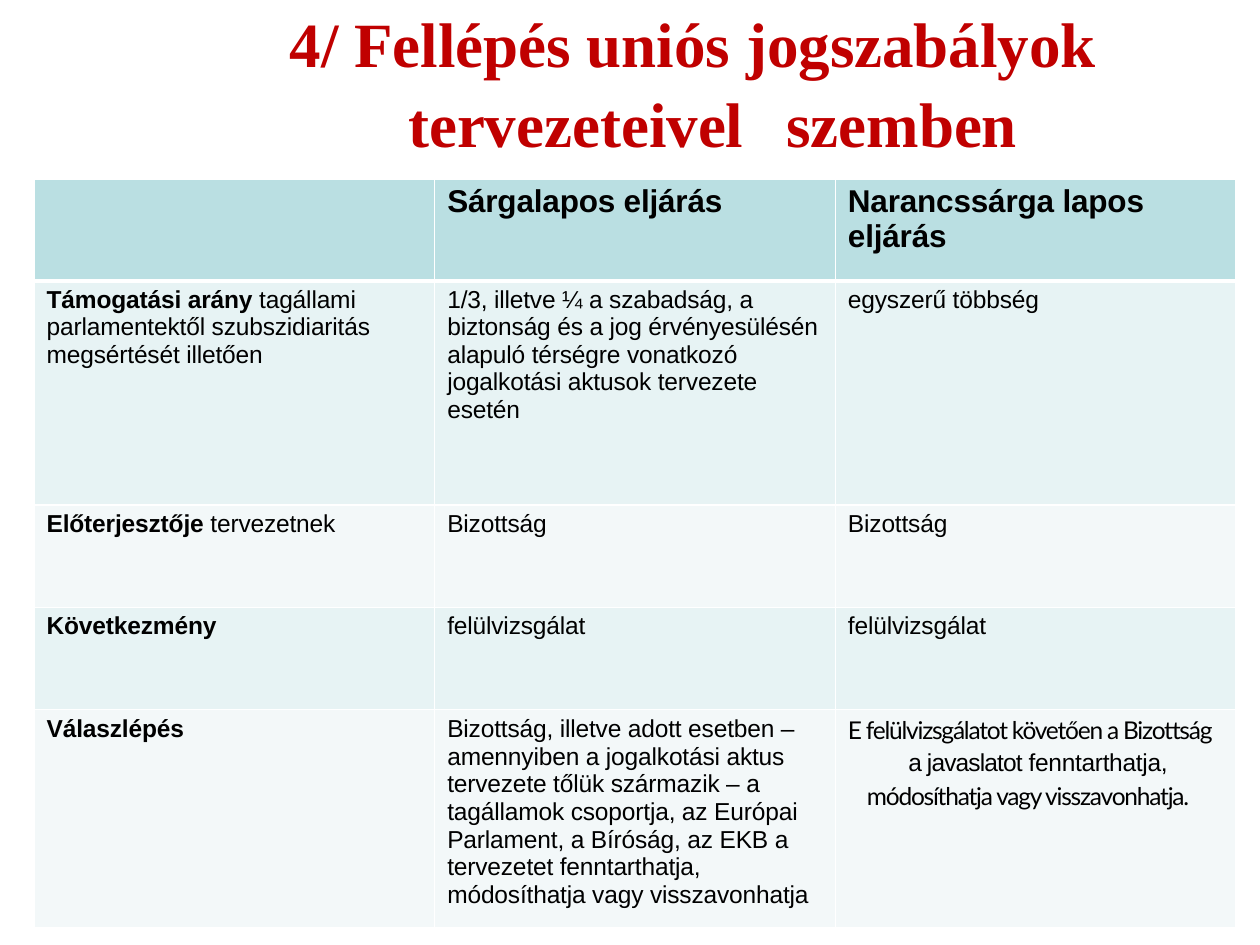
from typing import NamedTuple

from lxml.etree import SubElement
from pptx import Presentation
from pptx.dml.color import RGBColor
from pptx.enum.text import MSO_ANCHOR
from pptx.oxml.ns import qn
from pptx.util import Inches, Pt


class Run(NamedTuple):
    text: str
    bold: bool = False
    font: str = "Arial"
    spacing: float = -0.1


class Para(NamedTuple):
    runs: list[Run]
    left: float = 0.1
    first: float = 0
    before: float = 3.2
    line: float = 1


class Row(NamedTuple):
    height: float
    fill: str
    size: int
    cells: list[list[Para]]
    top_margin: float = 0.04


def rgb(value: str) -> RGBColor:
    return RGBColor.from_string(value)


def add_text(paragraph, text: str, *, size: float, font: str = "Arial", color: str = "000000",
             bold: bool = False, spacing: float = 0) -> None:
    run = paragraph.add_run()
    run.text = text
    run.font.size = Pt(size)
    run.font.name = font
    run.font.bold = bold
    run.font.color.rgb = rgb(color)
    run.font._element.set("spc", str(round(spacing * 100)))


def format_paragraph(paragraph, left: float, first: float, before: float, line: float) -> None:
    """Set indents in inches, space before in points and the line spacing factor."""
    properties = paragraph._p.get_or_add_pPr()
    properties.set("marL", str(Inches(left)))
    properties.set("indent", str(Inches(first)))
    paragraph.space_before = Pt(before)
    paragraph.line_spacing = line


def set_margins(target, top: float) -> None:
    target.margin_left = target.margin_right = target.margin_bottom = 0
    target.margin_top = Inches(top)


def add_border(cell, side: str, width: float) -> None:
    line = SubElement(cell._tc.get_or_add_tcPr(), qn(f"a:{side}"), w=str(Pt(width)))
    fill = SubElement(line, qn("a:solidFill"))
    SubElement(fill, qn("a:srgbClr"), val="FFFFFF")


def fill_cell(cell, row: Row, paras: list[Para], widths: dict[str, float]) -> None:
    set_margins(cell, row.top_margin)
    cell.vertical_anchor = MSO_ANCHOR.TOP
    for side, width in widths.items():
        add_border(cell, side, width)
    cell.fill.solid()
    cell.fill.fore_color.rgb = rgb(row.fill)
    frame = cell.text_frame
    for index, para in enumerate(paras):
        paragraph = frame.add_paragraph() if index else frame.paragraphs[0]
        format_paragraph(paragraph, para.left, para.first, para.before, para.line)
        for run in para.runs:
            add_text(paragraph, run.text, size=row.size, font=run.font,
                     bold=run.bold, spacing=run.spacing)


def plain(text: str) -> list[Para]:
    return [Para([Run(text)])]


def label(bold_part: str, rest: str = "") -> list[Para]:
    runs = [Run(bold_part, bold=True)]
    if rest:
        runs.append(Run(rest))
    return [Para(runs)]


def header(*lines: str) -> list[Para]:
    return [Para([Run(line, bold=True)], before=0.1 if index else 3.1)
            for index, line in enumerate(lines)]


HEADER_FILL, DARK_BAND, LIGHT_BAND = "BADFE2", "E7F3F4", "F3F8F9"
COLUMN_WIDTH = 3.18

orange_card_response = [
    Para([Run("E felülvizsgálatot követően a Bizottság", font="Lato", spacing=-0.7)], before=0.6),
    Para([Run("a ", spacing=-1.1),
          Run("javaslatot ", spacing=-0.5),
          Run("fenntarthatja, ", spacing=-0.2),
          Run("módosíthatja vagy visszavonhatja.", font="Lato", spacing=-0.7)],
         left=0.25, first=0.33, before=0, line=1.15),
]

ROWS = [
    Row(0.81, HEADER_FILL, 18, [
        [], header("Sárgalapos eljárás"), header("Narancssárga lapos", "eljárás")]),
    Row(1.78, DARK_BAND, 14, [
        label("Támogatási arány ",
              "tagállami parlamentektől szubszidiaritás megsértését illetően"),
        plain("1/3, illetve ¼ a szabadság, a biztonság és a jog érvényesülésén alapuló "
              "térségre vonatkozó jogalkotási aktusok tervezete esetén"),
        plain("egyszerű többség")]),
    Row(0.81, LIGHT_BAND, 14, [
        label("Előterjesztője ", "tervezetnek"), plain("Bizottság"), plain("Bizottság")]),
    Row(0.81, DARK_BAND, 14, [
        label("Következmény"), plain("felülvizsgálat"), plain("felülvizsgálat")]),
    Row(1.73, LIGHT_BAND, 14, [
        label("Válaszlépés"),
        plain("Bizottság, illetve adott esetben – amennyiben a jogalkotási aktus tervezete "
              "tőlük származik – a tagállamok csoportja, az Európai Parlament, a Bíróság, "
              "az EKB a tervezetet fenntarthatja, módosíthatja vagy visszavonhatja"),
        orange_card_response], top_margin=0.05),
]


def add_title(slide) -> None:
    title = slide.shapes.add_textbox(Inches(2.29), 0, Inches(6.43), Inches(1.23)).text_frame
    title.word_wrap = True
    set_margins(title, 0.01)
    paragraph = title.paragraphs[0]
    format_paragraph(paragraph, left=0.95, first=-0.94, before=1, line=1.05)
    tabs = SubElement(paragraph._p.get_or_add_pPr(), qn("a:tabLst"))
    SubElement(tabs, qn("a:tab"), pos=str(Inches(3.82)), algn="l")
    add_text(paragraph, "4/ Fellépés uniós jogszabályok tervezeteivel\tszemben",
             size=36, font="Times New Roman", color="C00000", bold=True)


def add_comparison(slide) -> None:
    columns = len(ROWS[0].cells)
    table = slide.shapes.add_table(
        len(ROWS), columns, Inches(0.27), Inches(1.42), Inches(COLUMN_WIDTH * columns),
        Inches(sum(row.height for row in ROWS))).table
    for column in table.columns:
        column.width = Inches(COLUMN_WIDTH)
    for index, row in enumerate(ROWS):
        table.rows[index].height = Inches(row.height)
        widths = {"lnL": 1, "lnR": 1, "lnT": 3 if index == 1 else 1, "lnB": 3 if index == 0 else 1}
        for column, paras in enumerate(row.cells):
            fill_cell(table.cell(index, column), row, paras, widths)


def main() -> None:
    presentation = Presentation()
    presentation.slide_width = Inches(10)
    presentation.slide_height = Inches(7.5)
    slide = presentation.slides.add_slide(presentation.slide_layouts[6])
    add_title(slide)
    add_comparison(slide)
    presentation.save("out.pptx")


if __name__ == "__main__":
    main()
